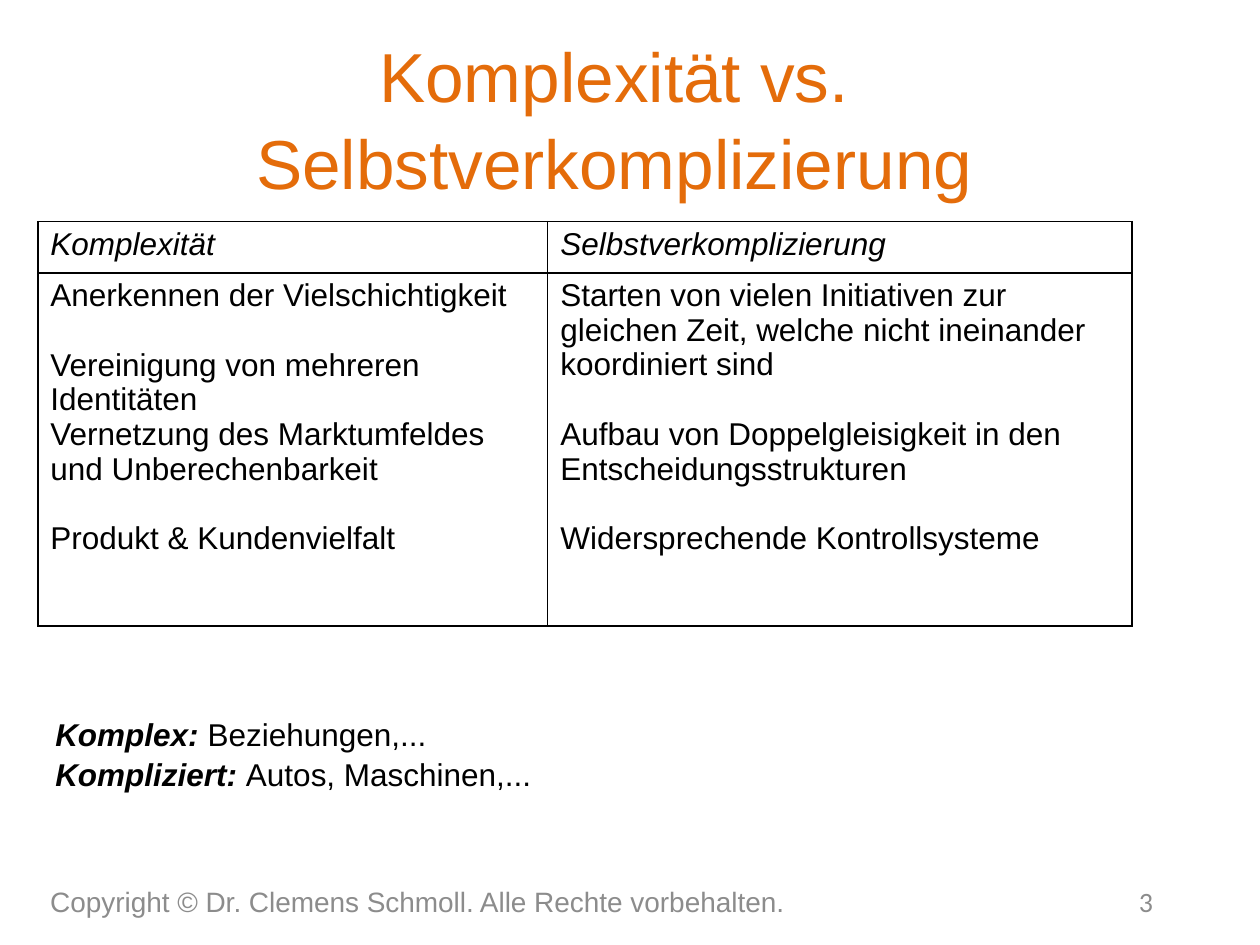
from lxml import etree
from pptx import Presentation
from pptx.dml.color import RGBColor
from pptx.enum import text as t
from pptx.oxml import ns
from pptx.util import Pt

HUES = {"title": "E46C0A", "body": "000000", "foot": "8C8C8C"}
LEFT, MID, RIGHT = t.PP_ALIGN.LEFT, t.PP_ALIGN.CENTER, t.PP_ALIGN.RIGHT


def write(para, runs, hue, size, face="Arial", align=LEFT, gap=1.0):
    """Fill a paragraph with (wording, font values) runs."""
    para.alignment, para.line_spacing = align, gap
    for words, style in runs:
        run = para.add_run()
        run.text = words
        look = {"name": face, "size": Pt(size), "bold": False, "italic": False, **style}
        for key, val in look.items():
            setattr(run.font, key, val)
        run.font.color.rgb = RGBColor.from_string(HUES[hue])


def frame(cell):
    """Give a table cell a thin black line on all four sides and no fill."""
    props = cell._tc.get_or_add_tcPr()
    for side in ("a:lnL", "a:lnR", "a:lnT", "a:lnB"):
        line = etree.SubElement(props, ns.qn(side), w=str(Pt(1)))
        fill = etree.SubElement(line, ns.qn("a:solidFill"))
        etree.SubElement(fill, ns.qn("a:srgbClr"), val=HUES["body"])
    cell.fill.background()


deck = Presentation()
deck.slide_width, deck.slide_height = Pt(720), Pt(540)
slide = deck.slides.add_slide(deck.slide_layouts[5])

# Title
title = slide.shapes.title
place = {"left": 36, "top": 21.6, "width": 630, "height": 90}
for key, val in place.items():
    setattr(title, key, Pt(val))
title.text_frame.auto_size = t.MSO_AUTO_SIZE.NONE
title.text_frame.vertical_anchor = t.MSO_ANCHOR.MIDDLE
write(title.text_frame.paragraphs[0], [("Komplexität vs. Selbstverkomplizierung", {})],
      "title", 39.6, align=MID, gap=1.04)

# Comparison table: each entry is wording and the space before it
heads = ["Komplexität", "Selbstverkomplizierung"]
lists = [
    [("Anerkennen der Vielschichtigkeit", 0),
     ("Vereinigung von mehreren Identitäten", 20),
     ("Vernetzung des Marktumfeldes und Unberechenbarkeit", 0),
     ("Produkt & Kundenvielfalt", 20)],
    [("Starten von vielen Initiativen zur gleichen Zeit, "
      "welche nicht ineinander koordiniert sind", 0),
     ("Aufbau von Doppelgleisigkeit in den Entscheidungsstrukturen", 20),
     ("Widersprechende Kontrollsysteme", 20)],
]
table = slide.shapes.add_table(2, 2, Pt(21.6), Pt(126.7), Pt(625.4), Pt(231)).table
table.first_row = table.horz_banding = False
for row, high in zip(table.rows, (29.2, 201.8)):
    row.height = Pt(high)
for col, (wide, head, items) in enumerate(zip((291.4, 334), heads, lists)):
    table.columns[col].width = Pt(wide)
    top, low = table.cell(0, col), table.cell(1, col)
    frame(top)
    frame(low)
    write(top.text_frame.paragraphs[0], [(head, {"italic": True})], "body", 18, gap=0.98)
    for num, (words, space) in enumerate(items):
        para = low.text_frame.paragraphs[0] if num == 0 else low.text_frame.add_paragraph()
        if space:
            para.space_before = Pt(space)
        write(para, [(words, {})], "body", 18, gap=0.98)

# Examples
note = slide.shapes.add_textbox(Pt(24.5), Pt(403.9), Pt(290), Pt(51.1)).text_frame
note.word_wrap = False
strong = {"bold": True, "italic": True}
pairs = [("Komplex: ", "Beziehungen,..."), ("Kompliziert: ", "Autos, Maschinen,...")]
for num, (term, words) in enumerate(pairs):
    para = note.paragraphs[0] if num == 0 else note.add_paragraph()
    write(para, [(term, strong), (words, {})], "body", 18, gap=1.06)

# Footer and page number
feet = [
    (21.6, 458, "Copyright © Dr. Clemens Schmoll. Alle Rechte vorbehalten.", "Arial", LEFT),
    (498.2, 167.8, "3", "Calibri", RIGHT),
]
for left, wide, words, face, align in feet:
    foot = slide.shapes.add_textbox(Pt(left), Pt(500.4), Pt(wide), Pt(28.8)).text_frame
    foot.word_wrap = True
    foot.vertical_anchor = t.MSO_ANCHOR.MIDDLE
    write(foot.paragraphs[0], [(words, {})], "foot", 16, face, align)

deck.save("out.pptx")
